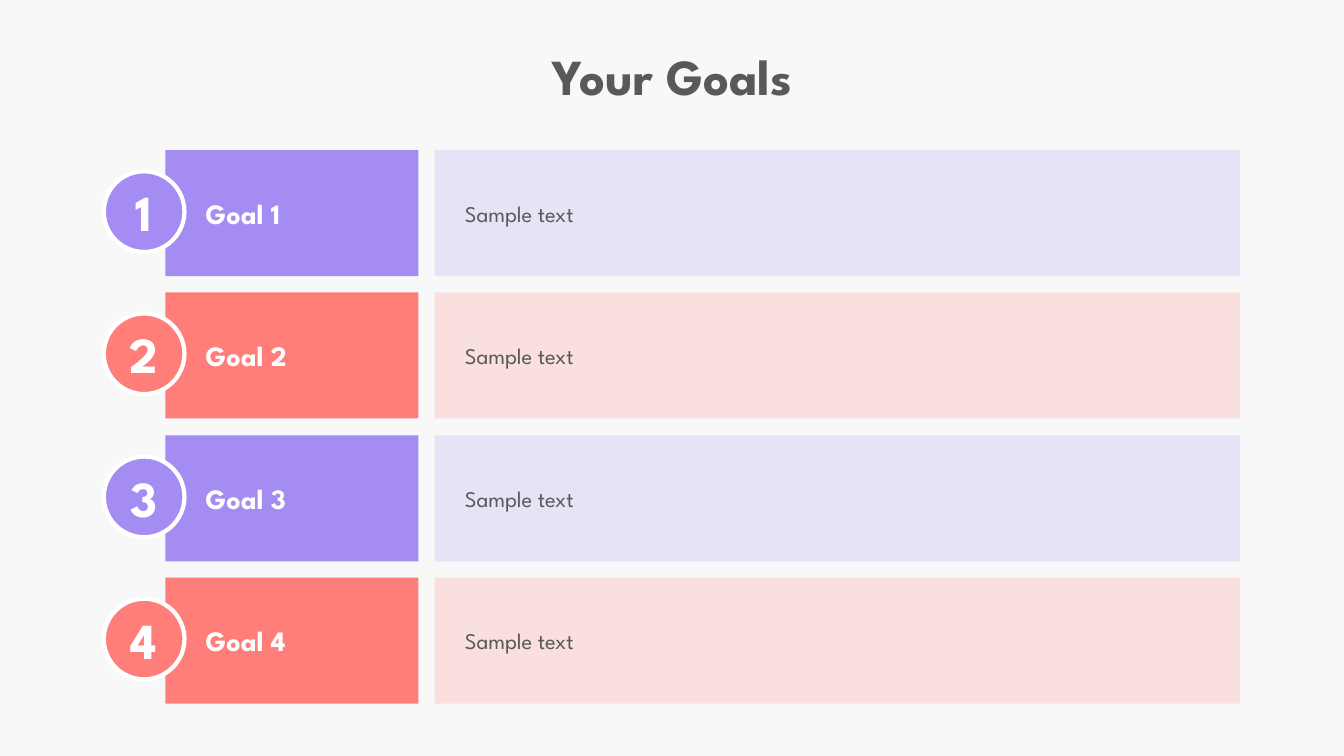
from dataclasses import dataclass

from lxml.etree import SubElement
from pptx import Presentation
from pptx.dml.color import RGBColor
from pptx.enum.shapes import MSO_SHAPE
from pptx.enum.text import MSO_ANCHOR, MSO_AUTO_SIZE, PP_ALIGN
from pptx.oxml.ns import qn
from pptx.shapes.autoshape import Shape
from pptx.slide import Slide
from pptx.util import Emu, Pt

EMU_PER_PX = 9144
FONT = "League Spartan"
WHITE = "FFFFFF"
GRAY = "595959"
PURPLE = "A48CF2"
CORAL = "FF7E79"
FIRST_ROW_TOP = 149
LAST_ROW_TOP = 573


@dataclass(frozen=True)
class Box:
    left: int
    top: int
    width: int
    height: int

    def emu(self) -> tuple[Emu, Emu, Emu, Emu]:
        return px(self.left), px(self.top), px(self.width), px(self.height)


@dataclass(frozen=True)
class TextStyle:
    size: int
    color: str
    bold: bool
    align: PP_ALIGN
    insets: tuple[int, int, int, int]


@dataclass(frozen=True)
class Goal:
    number: int
    color: str
    detail: str = "Sample text"


HEADING = TextStyle(36, GRAY, True, PP_ALIGN.CENTER, (10, 5, 10, 5))
NUMERAL = TextStyle(36, WHITE, True, PP_ALIGN.CENTER, (10, 5, 10, 5))
LABEL = TextStyle(20, WHITE, True, PP_ALIGN.LEFT, (40, 30, 10, 30))
DETAIL = TextStyle(16, GRAY, False, PP_ALIGN.LEFT, (30, 20, 30, 20))
GOALS = [Goal(1, PURPLE), Goal(2, CORAL), Goal(3, PURPLE), Goal(4, CORAL)]


def px(length: int) -> Emu:
    return Emu(length * EMU_PER_PX)


def rgb(color: str) -> RGBColor:
    return RGBColor.from_string(color)


def write(shape: Shape, text: str, style: TextStyle) -> None:
    frame = shape.text_frame
    frame.word_wrap = True
    (frame.margin_left, frame.margin_top,
     frame.margin_right, frame.margin_bottom) = map(px, style.insets)
    paragraph = frame.paragraphs[0]
    paragraph.alignment = style.align
    run = paragraph.add_run()
    run.text = text
    run.font.name = FONT
    run.font.size = Pt(style.size)
    run.font.bold = style.bold
    run.font.color.rgb = rgb(style.color)


def add_text(slide: Slide, box: Box, text: str, style: TextStyle) -> None:
    caption = slide.shapes.add_textbox(*box.emu())
    write(caption, text, style)
    caption.text_frame.auto_size = MSO_AUTO_SIZE.SHAPE_TO_FIT_TEXT


def add_filled(slide: Slide, kind: MSO_SHAPE, box: Box, color: str) -> Shape:
    shape = slide.shapes.add_shape(kind, *box.emu())
    shape.shadow.inherit = False
    shape.fill.solid()
    shape.fill.fore_color.rgb = rgb(color)
    shape.line.fill.background()
    return shape


def add_panel(slide: Slide, box: Box, color: str, text: str, style: TextStyle) -> Shape:
    panel = add_filled(slide, MSO_SHAPE.RECTANGLE, box, color)
    panel.text_frame.vertical_anchor = MSO_ANCHOR.MIDDLE
    write(panel, text, style)
    return panel


def set_opacity(shape: Shape, percent: int) -> None:
    fill_color = shape.fill._xPr.find(qn("a:solidFill"))[0]
    SubElement(fill_color, qn("a:alpha")).set("val", str(percent * 1000))


def add_goal(slide: Slide, goal: Goal, top: int) -> None:
    add_panel(slide, Box(164, top, 251, 125), goal.color, f"Goal {goal.number}", LABEL)
    detail = add_panel(slide, Box(431, top, 799, 125), goal.color, goal.detail, DETAIL)
    set_opacity(detail, 20)
    badge = add_filled(slide, MSO_SHAPE.OVAL, Box(103, top + 21, 80, 80), goal.color)
    badge.line.color.rgb = rgb(WHITE)
    badge.line.width = Pt(3)
    add_text(slide, Box(115, top + 26, 56, 71), str(goal.number), NUMERAL)


def main() -> None:
    presentation = Presentation()
    presentation.slide_width, presentation.slide_height = px(1333), px(750)
    slide = presentation.slides.add_slide(presentation.slide_layouts[6])
    slide.background.fill.solid()
    slide.background.fill.fore_color.rgb = rgb("F8F8F8")
    add_text(slide, Box(71, 40, 1192, 71), "Your Goals", HEADING)
    pitch = (LAST_ROW_TOP - FIRST_ROW_TOP) / (len(GOALS) - 1)
    for row, goal in enumerate(GOALS):
        add_goal(slide, goal, round(FIRST_ROW_TOP + row * pitch))
    presentation.save("out.pptx")


if __name__ == "__main__":
    main()
